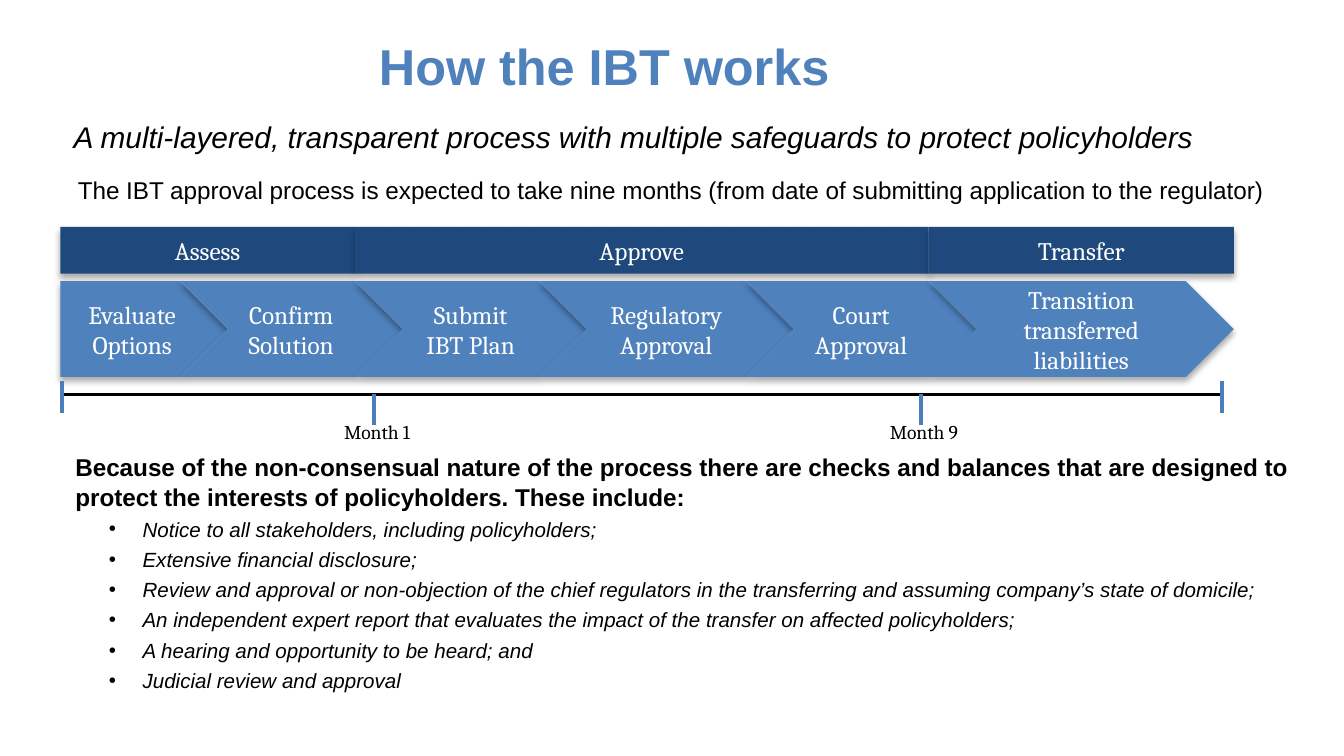
import pptx
import pptx.util
import pptx.dml.color
import pptx.enum.shapes
import pptx.enum.text
import pptx.oxml
import pptx.oxml.ns
import lxml.etree

Pt = pptx.util.Pt
SHAPES = pptx.enum.shapes.MSO_SHAPE
ALIGN = pptx.enum.text.PP_ALIGN
ANCHOR = pptx.enum.text.MSO_ANCHOR
COLOURS = {"navy": "1F497D", "blue": "4F81BD", "tick": "4B7EBC",
           "black": "000000", "white": "FFFFFF"}
SHADOW = (
    f'<a:effectLst {pptx.oxml.ns.nsdecls("a")}>'
    '<a:outerShdw blurRad="44450" dist="27940" dir="5400000" rotWithShape="0">'
    '<a:srgbClr val="000000"><a:alpha val="32000"/></a:srgbClr>'
    '</a:outerShdw></a:effectLst>')


class ProcessSlide:
    """Holds the style and the current slide, and draws each kind of element."""

    def __init__(self, presentation):
        self.slide = presentation.slides.add_slide(presentation.slide_layouts[5])

    def colour(self, name):
        return pptx.dml.color.RGBColor.from_string(COLOURS[name])

    def format(self, paragraph, size, colour="black", font="Arial",
               bold=False, italic=False, align=ALIGN.LEFT):
        paragraph.alignment = align
        for run in paragraph.runs:
            run.font.name = font
            run.font.size = Pt(size)
            run.font.bold = bold
            run.font.italic = italic
            run.font.color.rgb = self.colour(colour)

    def frame(self, shape, inset_x=7.2, inset_y=3.6, anchor=ANCHOR.TOP):
        frame = shape.text_frame
        frame.word_wrap = True
        frame.auto_size = pptx.enum.text.MSO_AUTO_SIZE.NONE
        frame.vertical_anchor = anchor
        frame.margin_left = frame.margin_right = Pt(inset_x)
        frame.margin_top = frame.margin_bottom = Pt(inset_y)
        return frame

    def title(self, text, left, top, width, height):
        title = self.slide.shapes.title
        title.left, title.top = Pt(left), Pt(top)
        title.width, title.height = Pt(width), Pt(height)
        frame = self.frame(title, 0, 0, ANCHOR.MIDDLE)
        frame.text = text
        self.format(frame.paragraphs[0], 27, "blue", bold=True)

    def text(self, text, left, top, width, height, size, inset_x=7.2,
             inset_y=3.6, anchor=ANCHOR.TOP, **style):
        box = self.slide.shapes.add_textbox(Pt(left), Pt(top), Pt(width), Pt(height))
        frame = self.frame(box, inset_x, inset_y, anchor)
        frame.text = text
        self.format(frame.paragraphs[0], size, **style)
        return frame

    def bullet(self, frame, text):
        paragraph = frame.add_paragraph()
        paragraph.text = text
        paragraph.space_before = Pt(3)
        properties = paragraph._p.get_or_add_pPr()
        properties.set("marL", str(Pt(36)))
        properties.set("indent", str(Pt(-18)))
        for tag, key, value in (("a:buFont", "typeface", "Arial"),
                                ("a:buChar", "char", "•")):
            lxml.etree.SubElement(properties, pptx.oxml.ns.qn(tag)).set(key, value)
        self.format(paragraph, 11, italic=True)

    def block(self, kind, text, left, top, width, height, fill):
        block = self.slide.shapes.add_shape(kind, Pt(left), Pt(top), Pt(width), Pt(height))
        if kind != SHAPES.RECTANGLE:
            block.adjustments[0] = 0.5
        block.fill.solid()
        block.fill.fore_color.rgb = self.colour(fill)
        block.line.fill.background()
        block._element.spPr.append(pptx.oxml.parse_xml(SHADOW))
        frame = self.frame(block, anchor=ANCHOR.MIDDLE)
        frame.text = text
        for paragraph in frame.paragraphs:
            self.format(paragraph, 13.5, "white", "Cambria", align=ALIGN.CENTER)

    def line(self, x1, y1, x2, y2, colour, weight):
        line = self.slide.shapes.add_connector(
            pptx.enum.shapes.MSO_CONNECTOR.STRAIGHT, Pt(x1), Pt(y1), Pt(x2), Pt(y2))
        line.line.color.rgb = self.colour(colour)
        line.line.width = Pt(weight)
        lxml.etree.SubElement(line._element.spPr, pptx.oxml.ns.qn("a:effectLst"))


def main():
    presentation = pptx.Presentation()
    presentation.slide_width, presentation.slide_height = Pt(720), Pt(405)
    slide = ProcessSlide(presentation)

    slide.title("How the IBT works", 203, 16.5, 253.5, 36.5)
    slide.text("A multi-layered, transparent process with multiple safeguards "
               "to protect policyholders", 32.4, 60, 638, 26.6, 16, italic=True)
    duration = slide.text(
        "The IBT approval process is expected to take nine months "
        "(from date of submitting application to the regulator)",
        36.7, 84.2, 662.4, 36.7, 13, 5, 2.9, ANCHOR.MIDDLE)
    duration.paragraphs[0].line_spacing = 0.9

    end = 661
    phases = [("Assess", 32.4), ("Approve", 190.1), ("Transfer", 497.5)]
    phase_ends = [left for _, left in phases[1:]] + [end]
    for (phase, left), right in zip(phases, phase_ends):
        slide.block(SHAPES.RECTANGLE, phase, left, 121.6, right - left, 25, "navy")

    steps = [("Evaluate\nOptions", 32.4), ("Confirm\nSolution", 96.5),
             ("Submit IBT Plan", 190.1), ("Regulatory Approval", 288.7),
             ("Court Approval", 399.6), ("Transition transferred liabilities", 497.5)]
    tip = 25.5
    step_ends = [left + tip for _, left in steps[1:]] + [end]
    for index, ((step, left), right) in enumerate(zip(steps, step_ends)):
        kind = SHAPES.CHEVRON if index else SHAPES.PENTAGON
        slide.block(kind, step, left, 150.7, right - left, 51.3, "blue")

    start, finish, axis = 33.3, 654.5, 211.3
    slide.line(start, axis, finish, axis, "black", 1.5)
    for edge in (start, finish):
        slide.line(edge, 204, edge, 221.5, "tick", 2.25)
    for month, tick in (("Month 1", 200.2), ("Month 9", 493.2)):
        slide.line(tick, axis, tick, 227.5, "tick", 2.25)
        slide.text(month, tick - 48.2, 225, 100, 28, 10.5, 0, 0,
                   font="Cambria", align=ALIGN.CENTER)

    safeguards = slide.text(
        "Because of the non-consensual nature of the process there are checks and "
        "balances that are designed to protect the interests of policyholders. "
        "These include:", 33.3, 239, 664.6, 136.8, 13, bold=True)
    for safeguard in (
            "Notice to all stakeholders, including policyholders;",
            "Extensive financial disclosure;",
            "Review and approval or non-objection of the chief regulators in the "
            "transferring and assuming company’s state of domicile;",
            "An independent expert report that evaluates the impact of the transfer "
            "on affected policyholders;",
            "A hearing and opportunity to be heard; and",
            "Judicial review and approval"):
        slide.bullet(safeguards, safeguard)

    presentation.save("out.pptx")


if __name__ == "__main__":
    main()
